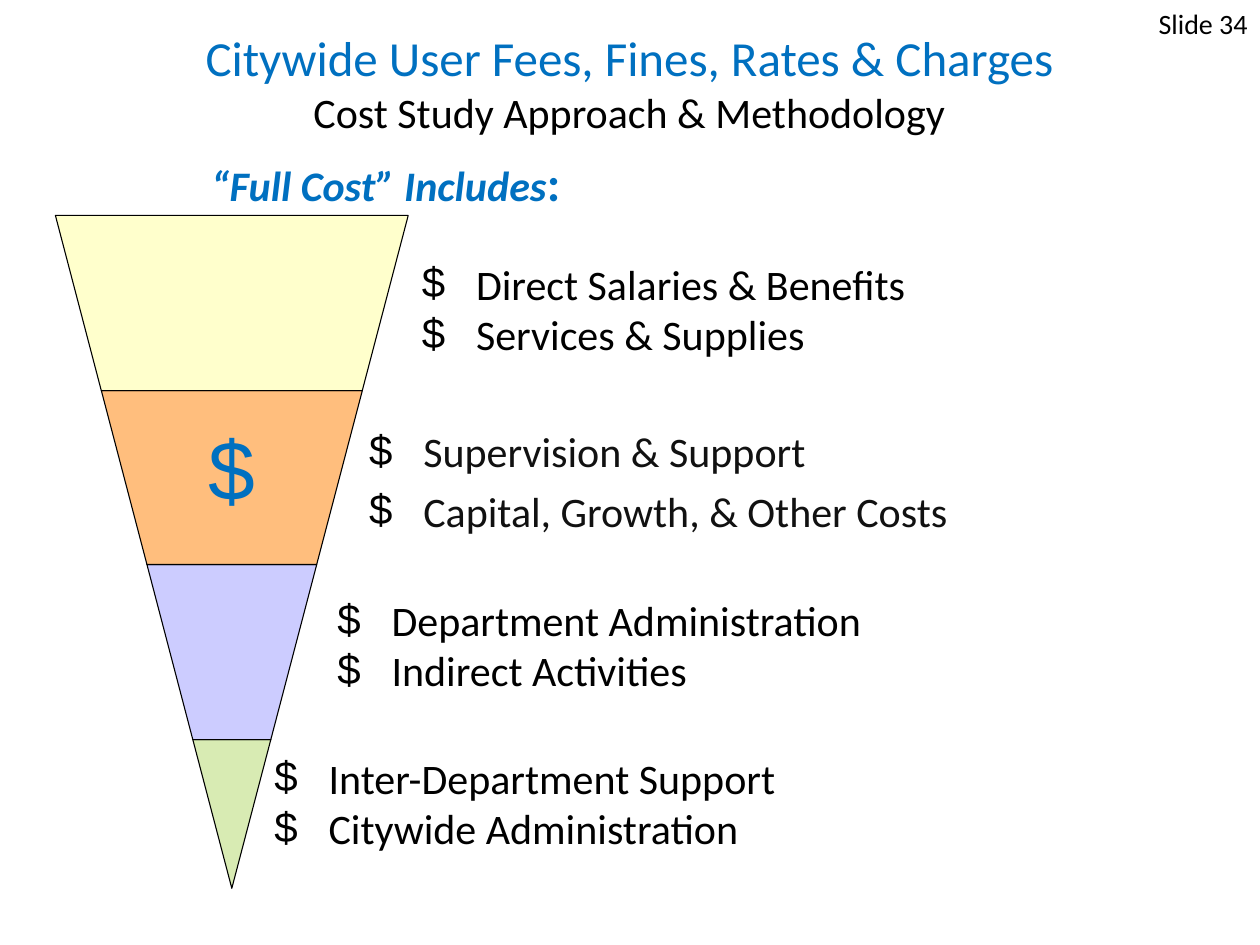
from copy import deepcopy

from lxml.etree import SubElement
from pptx import Presentation
from pptx.dml.color import RGBColor
from pptx.enum.text import MSO_ANCHOR, MSO_AUTO_SIZE, PP_ALIGN
from pptx.oxml.ns import qn
from pptx.util import Inches, Pt

BLACK = RGBColor(0x00, 0x00, 0x00)
CHARCOAL = RGBColor(0x11, 0x11, 0x11)
BLUE = RGBColor(0x00, 0x70, 0xC0)
YELLOW = RGBColor(0xFF, 0xFF, 0xCC)
ORANGE = RGBColor(0xFF, 0xBE, 0x7D)
LAVENDER = RGBColor(0xCC, 0xCC, 0xFF)
GREEN = RGBColor(0xD8, 0xEB, 0xB3)

FUNNEL_CENTER, FUNNEL_HALF_WIDTH = 1.84, 1.4
FUNNEL_LEVELS = [1.71, 3.1, 4.48, 5.87, 7.05]
FUNNEL_COLORS = [YELLOW, ORANGE, LAVENDER, GREEN]


class SlideBuilder:
    font = "Calibri"
    hanging = Inches(0.43)

    def __init__(self, slide):
        self.slide = slide

    def style(self, run, size, color, font=None):
        run.font.name = font or self.font
        run.font.size = Pt(size)
        run.font.color.rgb = color

    def place(self, shape, left, top, width, height):
        """Position a text shape and return its frame, wrapped and top-anchored."""
        shape.left, shape.top = Inches(left), Inches(top)
        shape.width, shape.height = Inches(width), Inches(height)
        frame = shape.text_frame
        frame.word_wrap = True
        frame.auto_size = MSO_AUTO_SIZE.NONE
        frame.vertical_anchor = MSO_ANCHOR.TOP
        return frame

    def text_box(self, *box):
        return self.place(self.slide.shapes.add_textbox(0, 0, 0, 0), *box)

    def title(self, heading, subheading, *box):
        frame = self.place(self.slide.shapes.title, *box)
        frame.text = f"{heading}\v{subheading}"
        paragraph = frame.paragraphs[0]
        paragraph.alignment = PP_ALIGN.CENTER
        heading_run, subheading_run = paragraph.runs
        self.style(heading_run, 28, BLUE)
        self.style(subheading_run, 24, BLACK)
        # The line break needs the heading's size to keep the line height.
        line_break = paragraph._p.find(qn("a:br"))
        line_break.insert(0, deepcopy(heading_run._r.find(qn("a:rPr"))))

    def label(self, text, *box):
        frame = self.text_box(*box)
        frame.text = text
        frame.paragraphs[0].alignment = PP_ALIGN.RIGHT
        self.style(frame.paragraphs[0].runs[0], 16, BLACK)

    def section_heading(self, text, ending, *box):
        paragraph = self.text_box(*box).paragraphs[0]
        paragraph.line_spacing = 0.8
        for part, size, italic in ((text, 24, True), (ending, 28, False)):
            run = paragraph.add_run()
            run.text = part
            self.style(run, size, BLUE)
            run.font.bold = True
            run.font.italic = italic

    def dollar_bullet(self, paragraph):
        properties = paragraph._p.get_or_add_pPr()
        properties.set("marL", str(self.hanging))
        properties.set("indent", str(-self.hanging))
        bullet_color = SubElement(properties, qn("a:buClr"))
        SubElement(bullet_color, qn("a:srgbClr"), val=str(BLACK))
        SubElement(properties, qn("a:buFont"), typeface="Arial")
        SubElement(properties, qn("a:buChar"), char="$")

    def cost_list(self, frame, costs, color=BLACK, gap=0):
        frame.text = "\n".join(costs)
        for index, paragraph in enumerate(frame.paragraphs):
            self.dollar_bullet(paragraph)
            paragraph.space_before = Pt(gap if index else 0)
            self.style(paragraph.runs[0], 24, color)

    def funnel_layer(self, group, top, bottom, color):
        def edge_points(y):
            start, apex = FUNNEL_LEVELS[0], FUNNEL_LEVELS[-1]
            half = FUNNEL_HALF_WIDTH * (apex - y) / (apex - start)
            return [(Inches(FUNNEL_CENTER + offset), Inches(y)) for offset in (-half, half)]

        top_left, top_right = edge_points(top)
        bottom_left, bottom_right = edge_points(bottom)
        outline = [top_right, bottom_right]
        if bottom_left != bottom_right:
            outline.append(bottom_left)
        builder = group.shapes.build_freeform(*top_left)
        builder.add_line_segments(outline, close=True)
        layer = builder.convert_to_shape()
        layer.shadow.inherit = False
        layer.fill.solid()
        layer.fill.fore_color.rgb = color
        layer.line.color.rgb = BLACK
        layer.line.width = Pt(0.63)
        return layer

    def funnel(self):
        group = self.slide.shapes.add_group_shape()
        bands = list(zip(FUNNEL_LEVELS, FUNNEL_LEVELS[1:], FUNNEL_COLORS))
        layers = [self.funnel_layer(group, *band) for band in reversed(bands)]
        frame = layers[2].text_frame
        frame.text = "$"
        frame.vertical_anchor = MSO_ANCHOR.MIDDLE
        frame.margin_bottom = Inches(0.22)
        frame.paragraphs[0].alignment = PP_ALIGN.CENTER
        self.style(frame.paragraphs[0].runs[0], 48, BLUE, "Arial")


def main():
    presentation = Presentation()
    presentation.slide_width = Inches(10)
    presentation.slide_height = Inches(7.5)
    slide = presentation.slides.add_slide(presentation.slide_layouts[1])
    builder = SlideBuilder(slide)

    builder.title("Citywide User Fees, Fines, Rates & Charges",
                  "Cost Study Approach & Methodology", 0.33, 0.17, 9.33, 0.83)
    support = builder.place(slide.placeholders[1], 2.83, 3.33, 5.5, 0.92)
    builder.cost_list(support, ["Supervision & Support",
                                "Capital, Growth, & Other Costs"], CHARCOAL, gap=5)
    builder.section_heading("“Full Cost” Includes", ":", 1.58, 1.25, 7.25, 0.67)
    builder.funnel()

    for box, costs in (
        ((3.25, 2, 5.9, 1), ["Direct Salaries & Benefits", "Services & Supplies"]),
        ((2.58, 4.67, 5.5, 1), ["Department Administration", "Indirect Activities"]),
        ((2.08, 5.92, 4.83, 0.92), ["Inter-Department Support", "Citywide Administration"]),
    ):
        builder.cost_list(builder.text_box(*box), costs)
    builder.label("Slide 34", 7.67, 0, 2.33, 0.5)

    presentation.save("out.pptx")


if __name__ == "__main__":
    main()
